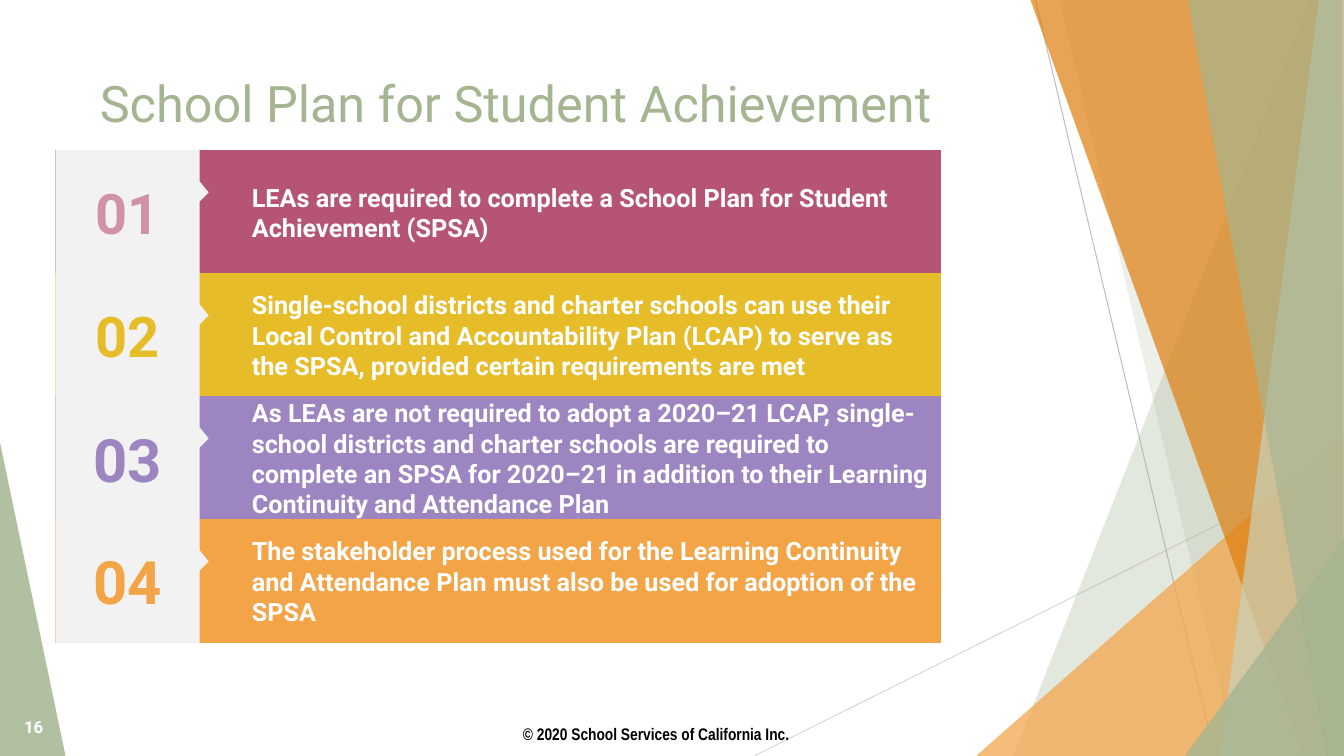
from lxml import etree
from pptx import Presentation
from pptx.dml.color import RGBColor
from pptx.enum.shapes import MSO_CONNECTOR
from pptx.enum.text import MSO_ANCHOR, MSO_AUTO_SIZE, PP_ALIGN
from pptx.oxml.ns import qn
from pptx.util import Inches, Pt

STRAIGHT = MSO_CONNECTOR.STRAIGHT
TOP, MIDDLE = MSO_ANCHOR.TOP, MSO_ANCHOR.MIDDLE
LEFT, CENTER = PP_ALIGN.LEFT, PP_ALIGN.CENTER
NO_AUTOFIT = MSO_AUTO_SIZE.NONE

WIDTH, HEIGHT = 13.33, 7.5
COLORS = {
    "sage": "A5B592",
    "pale_sage": "C8D2BC",
    "orange": "F3A447",
    "dark_orange": "DD7E0E",
    "rose": "B55475",
    "light_rose": "D092A7",
    "gold": "E7BC29",
    "purple": "9C85C0",
    "panel": "F2F2F2",
    "light_line": "D8D8D8",
    "line": "BFBFBF",
    "white": "FFFFFF",
    "black": "000000",
}

LEFT_FACET = ([(0, 4.39), (0.65, HEIGHT), (0, HEIGHT)], "sage", 85)
RIGHT_FACETS = [
    ([(13, 0), (10.05, HEIGHT), (WIDTH, HEIGHT), (WIDTH, 0)], "sage", 30),
    ([(10.51, 0), (12.26, HEIGHT), (WIDTH, HEIGHT), (WIDTH, 0)], "sage", 20),
    ([(9.68, HEIGHT), (WIDTH, 4.29), (WIDTH, HEIGHT)], "orange", 72),
    ([(10.22, 0), (12.93, HEIGHT), (WIDTH, HEIGHT), (WIDTH, 0)], "dark_orange", 70),
    ([(13.08, 0), (12.1, HEIGHT), (WIDTH, HEIGHT), (WIDTH, 0)], "pale_sage", 70),
    ([(11.78, 0), (13.15, HEIGHT), (WIDTH, HEIGHT), (13.31, 0)], "sage", 65),
    ([(11.75, HEIGHT), (WIDTH, 5.35), (WIDTH, HEIGHT)], "sage", 80),
]

ROW_LEFT, ROW_TOP, ROW_WIDTH, ROW_HEIGHT, ROW_PITCH = 0.55, 1.49, 8.78, 1.23, 1.22
ROWS = [
    ("rose", "light_rose", 40, 6.86,
     "LEAs are required to complete a School Plan for Student Achievement (SPSA)"),
    ("gold", "gold", 40, 6.86,
     "Single-school districts and charter schools can use their Local Control and "
     "Accountability Plan (LCAP) to serve as the SPSA, provided certain requirements are met"),
    ("purple", "purple", 42.7, 6.93,
     "As LEAs are not required to adopt a 2020–21 LCAP, single-school districts and "
     "charter schools are required to complete an SPSA for 2020–21 in addition to their "
     "Learning Continuity and Attendance Plan"),
    ("orange", "orange", 42.7, 6.86,
     "The stakeholder process used for the Learning Continuity and Attendance Plan "
     "must also be used for adoption of the SPSA"),
]


def rgb(name):
    return RGBColor.from_string(COLORS[name])


def add_polygon(s, points, color, opacity=100):
    start, *rest = [(Inches(x), Inches(y)) for x, y in points]
    builder = s.shapes.build_freeform(*start)
    builder.add_line_segments(rest, close=True)
    sp = builder.convert_to_shape()
    sp.shadow.inherit = False
    sp.line.fill.background()
    sp.fill.solid()
    sp.fill.fore_color.rgb = rgb(color)
    if opacity < 100:
        fill_color = sp.fill._xPr.find(qn("a:solidFill"))[0]
        etree.SubElement(fill_color, qn("a:alpha"), val=str(opacity * 1000))


def add_line(s, x1, y1, x2, y2, color):
    line = s.shapes.add_connector(STRAIGHT, Inches(x1), Inches(y1), Inches(x2), Inches(y2))
    line.line.color.rgb = rgb(color)
    line.line.width = Pt(0.75)
    etree.SubElement(line._element.spPr, qn("a:effectLst"))


def format_text(sp, text, size, color, bold, align, anchor, font="Roboto"):
    tf = sp.text_frame
    tf.text = text
    tf.word_wrap = True
    tf.auto_size = NO_AUTOFIT
    tf.vertical_anchor = anchor
    p = tf.paragraphs[0]
    p.alignment = align
    r = p.runs[0]
    r.font.name = font
    r.font.size = Pt(size)
    r.font.bold = bold
    r.font.color.rgb = rgb(color)


def add_text(s, x, y, w, h, text, size, color, align=LEFT, font="Roboto"):
    sp = s.shapes.add_textbox(Inches(x), Inches(y), Inches(w), Inches(h))
    sp.text_frame.margin_top = sp.text_frame.margin_bottom = 0
    format_text(sp, text, size, color, True, align, MIDDLE, font)


def add_title(s, text):
    title = s.shapes.title
    title.left, title.top = Inches(0.89), Inches(0.67)
    title.width, title.height = Inches(9.26), Inches(0.82)
    format_text(title, text, 36, "sage", False, LEFT, TOP)


def add_background(s):
    add_polygon(s, *LEFT_FACET)
    add_line(s, 7.48, HEIGHT, WIDTH, 4.58, "light_line")
    add_line(s, 10.27, 0, 12.05, HEIGHT, "line")
    for facet in RIGHT_FACETS:
        add_polygon(s, *facet)


def add_row(s, index, band_color, number_color, number_size, text_width, text):
    top = ROW_TOP + index * ROW_PITCH
    bottom = top + ROW_HEIGHT
    right = ROW_LEFT + ROW_WIDTH
    add_polygon(s, [(ROW_LEFT, top), (right, top), (right, bottom), (ROW_LEFT, bottom)],
                band_color)
    add_polygon(s, [(ROW_LEFT, top), (1.98, top), (1.98, top + 0.31), (2.07, top + 0.42),
                    (1.98, top + 0.51), (1.98, bottom), (ROW_LEFT, bottom)], "panel")
    add_text(s, 0.75, top, 1.04, ROW_HEIGHT, f"{index + 1:02d}", number_size,
             number_color, CENTER)
    add_text(s, 2.4, top, text_width, ROW_HEIGHT, text, 18, "white")


def main():
    prs = Presentation()
    prs.slide_width, prs.slide_height = Inches(WIDTH), Inches(HEIGHT)
    s = prs.slides.add_slide(prs.slide_layouts[5])
    add_background(s)
    add_text(s, 4.26, 7.16, 4.5, 0.24, "© 2020 School Services of California Inc.", 12,
             "black", CENTER, "Arial Narrow")
    add_title(s, "School Plan for Student Achievement")
    add_text(s, 0.14, 7.01, 0.75, 0.4, "16", 12, "white")
    for index, row in enumerate(ROWS):
        add_row(s, index, *row)
    prs.save("out.pptx")


if __name__ == "__main__":
    main()
